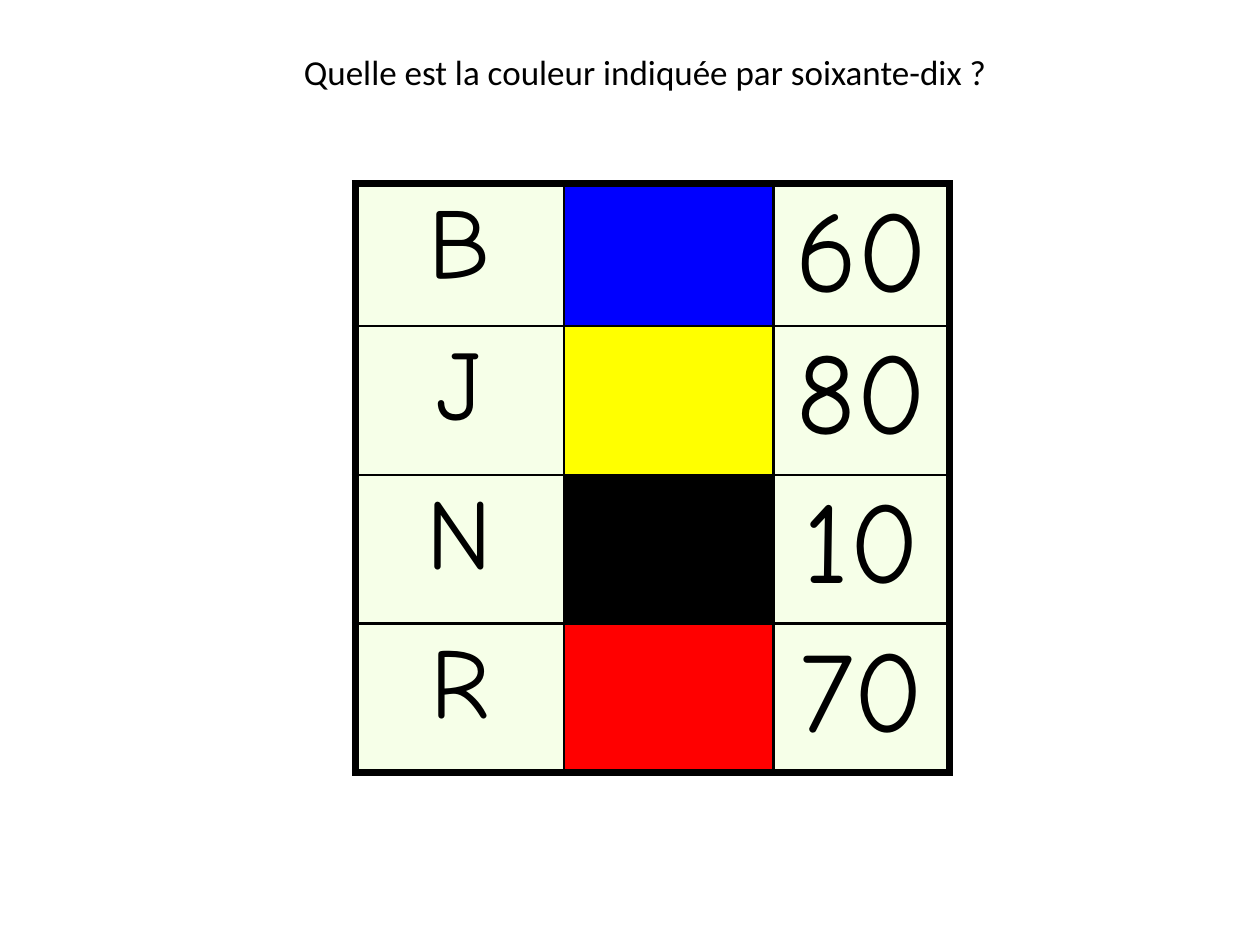
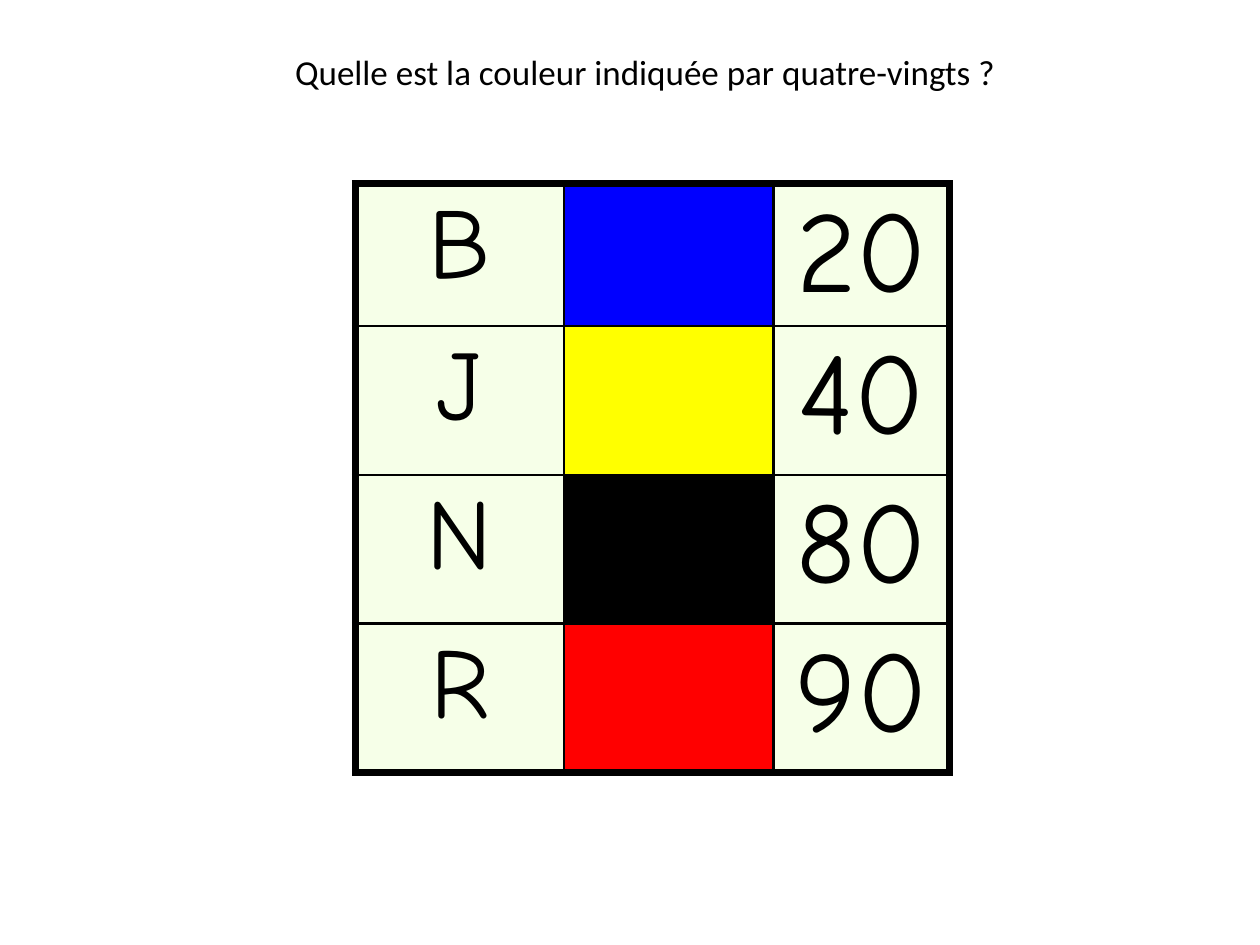
from lxml.etree import SubElement as Sub
from pptx import Presentation
from pptx.dml.color import RGBColor as RGB
from pptx.enum.text import MSO_ANCHOR as Anchor, MSO_AUTO_SIZE as Fit, PP_ALIGN as Align
from pptx.oxml.ns import qn
from pptx.util import Pt

# Colours
BLACK = RGB(0, 0, 0)
CREAM = RGB(0xF6, 0xFF, 0xE8)
BLUE = RGB(0, 0, 0xFF)
YELLOW = RGB(0xFF, 0xFF, 0)
RED = RGB(0xFF, 0, 0)

# Shared grid
KEYS = [("B", BLUE), ("J", YELLOW), ("N", BLACK), ("R", RED)]
COLS = [119.5, 119.5, 100.8]
ROWS = [76.3, 85, 85, 85]
THICK, THIN = 4.5, 1.5

# Number asked for, and the numbers beside the four colours
QUIZ = [
    ("soixante-dix", [60, 80, 10, 70]),
    ("quatre-vingts", [20, 40, 80, 90]),
]


def style(para, font, size):
    para.alignment = Align.CENTER
    para.font.name = font
    para.font.size = Pt(size)
    para.font.color.rgb = BLACK


def add_title(slide, text):
    title = slide.shapes.title
    title.left, title.top = Pt(146.2), Pt(25.2)
    title.width, title.height = Pt(445), Pt(31.5)
    frame = title.text_frame
    frame.text = text
    frame.auto_size = Fit.NONE
    frame.word_wrap = True
    frame.vertical_anchor = Anchor.TOP
    style(frame.paragraphs[0], "Calibri", 20)


def add_edge(cell, side, width):
    props = cell._tc.get_or_add_tcPr()
    line = Sub(props, qn(f"a:ln{side}"), w=str(Pt(width)))
    fill = Sub(line, qn("a:solidFill"))
    Sub(fill, qn("a:srgbClr"), val=str(BLACK))


def fill_cell(cell, color, text="", size=18):
    cell.fill.solid()
    cell.fill.fore_color.rgb = color
    cell.margin_left = cell.margin_right = Pt(5.4)
    cell.margin_top = cell.margin_bottom = Pt(2.7)
    cell.text = text
    style(cell.text_frame.paragraphs[0], "Comic Neue", size)


def add_grid(slide, nums):
    frame = slide.shapes.add_table(
        len(ROWS), len(COLS), Pt(203), Pt(105), Pt(sum(COLS)), Pt(sum(ROWS)))
    table = frame.table
    table.first_row = table.horz_banding = False
    for col, width in zip(table.columns, COLS):
        col.width = Pt(width)
    for row, height in zip(table.rows, ROWS):
        row.height = Pt(height)

    # Thick outer frame, thin inner lines
    end_r, end_c = len(ROWS) - 1, len(COLS) - 1
    for r in range(len(ROWS)):
        for c in range(len(COLS)):
            outer = {"L": c == 0, "R": c == end_c, "T": r == 0, "B": r == end_r}
            for side, edge in outer.items():
                add_edge(table.cell(r, c), side, THICK if edge else THIN)

    # Letter, colour, number
    for r, ((key, color), num) in enumerate(zip(KEYS, nums)):
        fill_cell(table.cell(r, 0), CREAM, key, 57)
        fill_cell(table.cell(r, 1), color)
        fill_cell(table.cell(r, 2), CREAM, str(num), 66)


def main():
    deck = Presentation()
    deck.slide_width, deck.slide_height = Pt(720), Pt(540)
    for word, nums in QUIZ:
        slide = deck.slides.add_slide(deck.slide_layouts[5])
        add_title(slide, f"Quelle est la couleur indiquée par {word} ?")
        add_grid(slide, nums)
    deck.save("out.pptx")


if __name__ == "__main__":
    main()
